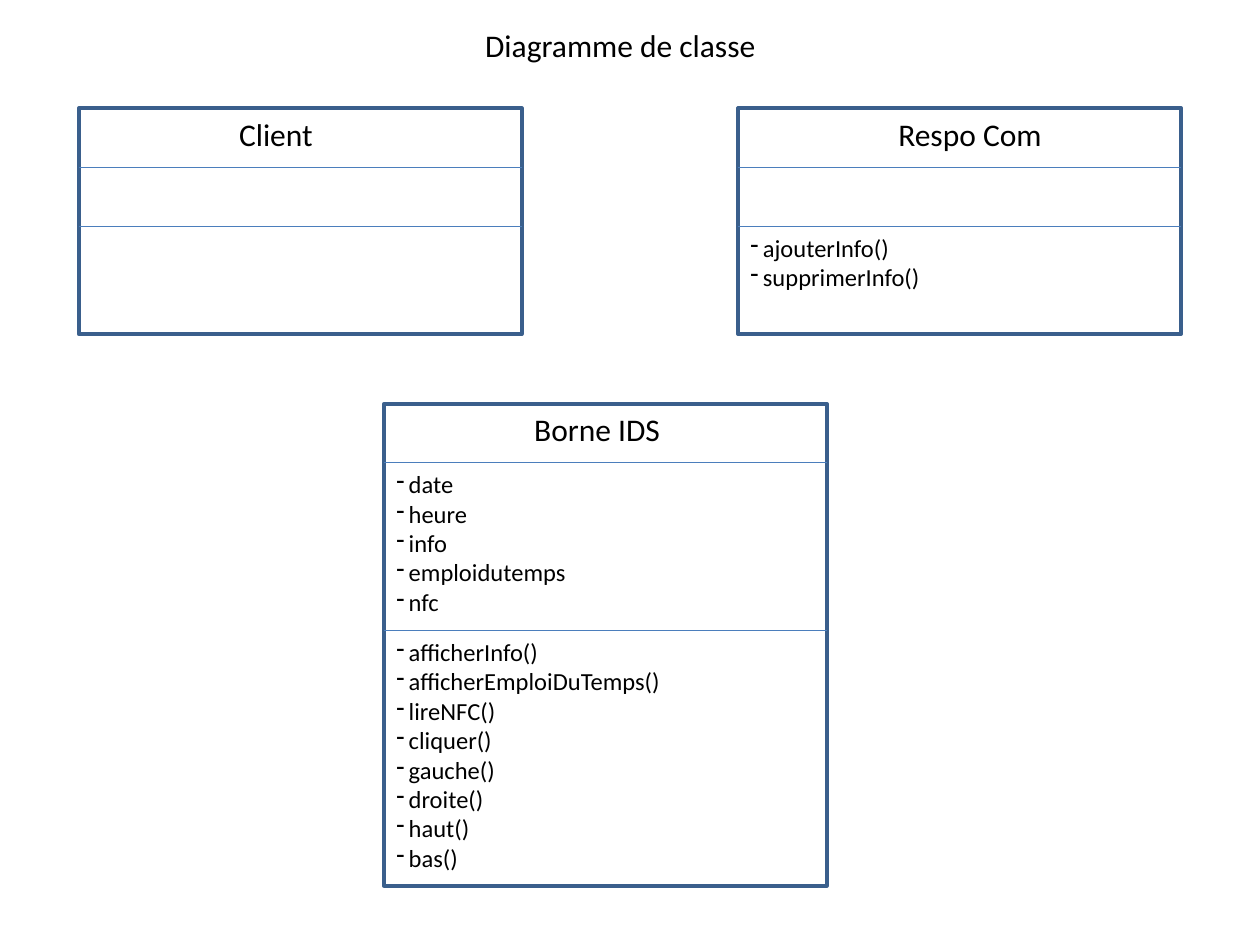
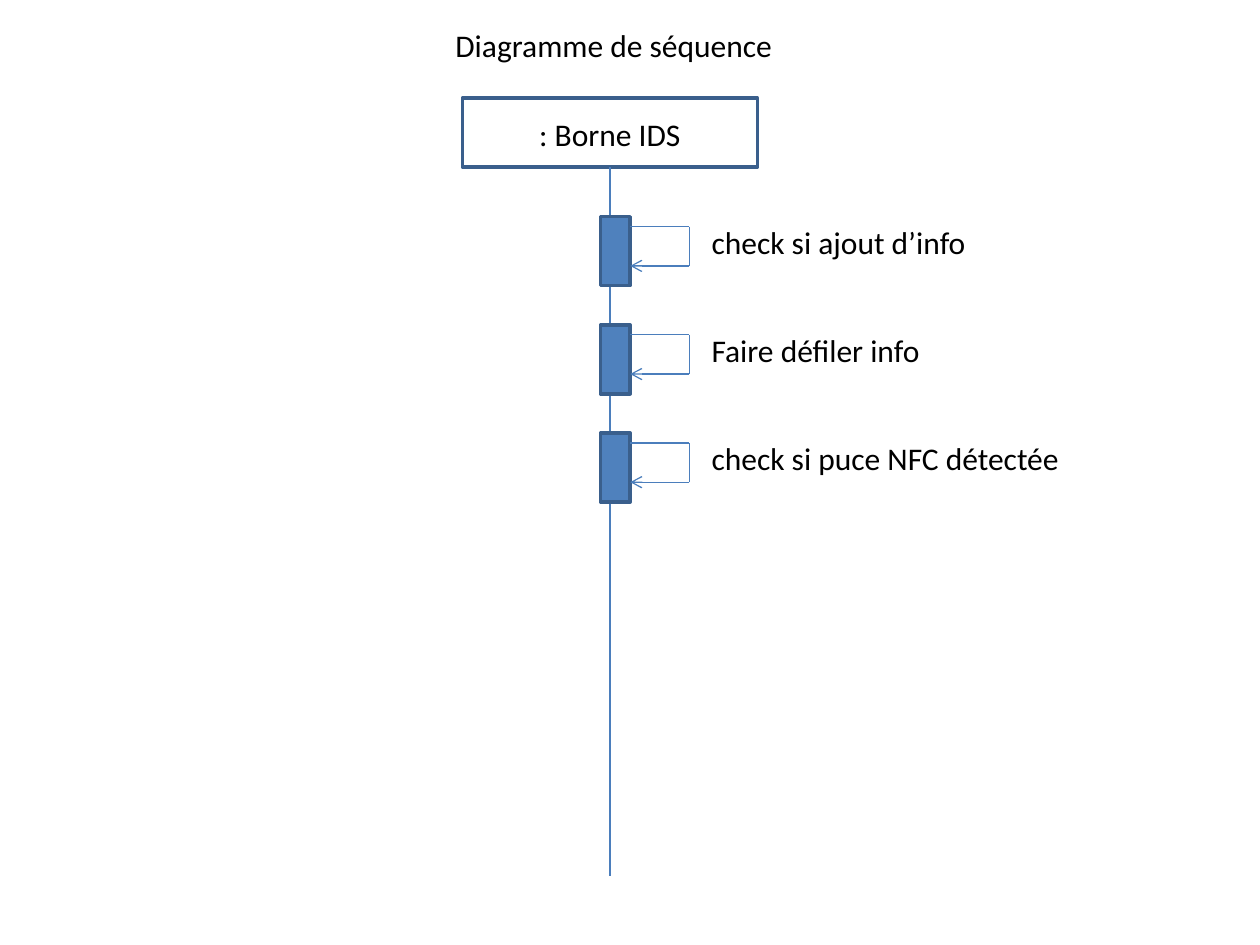
from collections import namedtuple

from pptx import Presentation
from pptx.dml.color import RGBColor
from pptx.enum.shapes import MSO_CONNECTOR as Connector, MSO_SHAPE as Shape
from pptx.enum.text import MSO_ANCHOR as Anchor, MSO_AUTO_SIZE as AutoSize, PP_ALIGN as Align
from pptx.oxml.ns import qn
from pptx.oxml.xmlchemy import OxmlElement
from pptx.util import Cm, Pt

Box = namedtuple("Box", "left top width height")

COLORS = {"text": "000000", "outline": "3A5F8C", "rule": "4B7EBC", "bar": "4F81BD"}
FRAME = {
    "word_wrap": True, "auto_size": AutoSize.NONE, "vertical_anchor": Anchor.TOP,
    "margin_left": Cm(0.25), "margin_right": Cm(0.25),
    "margin_top": Cm(0.13), "margin_bottom": Cm(0.13),
}
HEADING = {"name": "Calibri", "size": Pt(18), "bold": False}
MEMBER = {**HEADING, "size": Pt(14)}

LABEL_HEIGHT = 1.02
TITLE_TOP = 0.4
NAME_HEIGHT = 1.19
MEMBER_HEIGHT = 0.6
BULLET_INDENT = 0.25

CLASS_WIDTH = 8.93
CLASSES = [
    ("Client", Box(1.59, 2.18, CLASS_WIDTH, 4.56), 2.98, 2.38, [], []),
    ("Respo Com", Box(14.88, 2.18, CLASS_WIDTH, 4.56), 2.98, 2.38,
     [], ["ajouterInfo()", "supprimerInfo()"]),
    ("Borne IDS", Box(7.74, 8.14, CLASS_WIDTH, 9.72), 2.78, 4.57,
     ["date", "heure", "info", "emploidutemps", "nfc"],
     ["afficherInfo()", "afficherEmploiDuTemps()", "lireNFC()", "cliquer()",
      "gauche()", "droite()", "haut()", "bas()"]),
]
STEPS = [
    ("check si ajout d’info", 5.77),
    ("Faire défiler info", 4.78),
    ("check si puce NFC détectée", 7.75),
]


def rgb(color):
    return RGBColor.from_string(COLORS[color])


def apply(target, values):
    for key, value in values.items():
        setattr(target, key, value)


def add_bullet(para):
    props = para._p.get_or_add_pPr()
    props.set("marL", str(Cm(BULLET_INDENT)))
    props.set("indent", str(-Cm(BULLET_INDENT)))
    bullet = OxmlElement("a:buChar")
    bullet.set("char", "-")
    props.append(bullet)


def fill_text(shape, lines, font, align=Align.LEFT, bulleted=False):
    frame = shape.text_frame
    apply(frame, FRAME)
    frame.text = "\n".join(lines)
    for para in frame.paragraphs:
        para.alignment = align
        if bulleted:
            add_bullet(para)
        for span in para.runs:
            apply(span.font, font)
            span.font.color.rgb = rgb("text")


def add_label(page, box, lines, font=HEADING, **options):
    shape = page.shapes.add_textbox(*map(Cm, box))
    fill_text(shape, lines, font, **options)


def add_rectangle(page, box, fill=None):
    shape = page.shapes.add_shape(Shape.RECTANGLE, *map(Cm, box))
    shape.shadow.inherit = False
    if fill:
        shape.fill.solid()
        shape.fill.fore_color.rgb = rgb(fill)
    else:
        shape.fill.background()
    shape.line.color.rgb = rgb("outline")
    shape.line.width = Pt(2)


def add_line(page, start, end, arrow=False):
    line = page.shapes.add_connector(Connector.STRAIGHT, *map(Cm, start + end))
    line.line.color.rgb = rgb("rule")
    line.line.width = Pt(0.75)
    props = line._element.find(qn("p:spPr"))
    if arrow:
        tail = OxmlElement("a:tailEnd")
        tail.set("type", "arrow")
        props.find(qn("a:ln")).append(tail)
    props.append(OxmlElement("a:effectLst"))


def add_page(deck, title, left, width):
    page = deck.slides.add_slide(deck.slide_layouts[5])
    box = Box(left, TITLE_TOP, width, LABEL_HEIGHT)
    apply(page.shapes.title, dict(zip(Box._fields, map(Cm, box))))
    fill_text(page.shapes.title, [title], HEADING)
    return page


def add_class(page, name, box, name_offset, methods_offset, fields, methods):
    add_rectangle(page, box)
    name_box = Box(box.left + name_offset, box.top, 3.6, LABEL_HEIGHT)
    add_label(page, name_box, [name])
    for offset, members in ((NAME_HEIGHT, fields), (methods_offset, methods)):
        top = box.top + offset
        add_line(page, (box.left, top), (box.left + box.width, top))
        if members:
            height = 0.25 + MEMBER_HEIGHT * len(members)
            add_label(page, Box(box.left, top, box.width, height),
                      members, MEMBER, bulleted=True)


def add_step(page, box, caption, caption_width):
    add_rectangle(page, box, "bar")
    near = box.left + box.width
    far = near + 1.19
    top, bottom = box.top + 0.2, box.top + 0.99
    corners = [(near, top), (far, top), (far, bottom), (near, bottom)]
    for start, end in zip(corners, corners[1:]):
        add_line(page, start, end, arrow=end == corners[-1])
    add_label(page, Box(far + 0.2, box.top, caption_width, LABEL_HEIGHT), [caption])


def add_lifeline(page, box, name, length):
    add_rectangle(page, box)
    name_box = Box(box.left + 1.2, box.top + 0.2, box.width - 2.4, LABEL_HEIGHT)
    add_label(page, name_box, [name], align=Align.CENTER)
    center, bottom = box.left + box.width / 2, box.top + box.height
    add_line(page, (center, bottom), (center, bottom + length))
    for index, (caption, width) in enumerate(STEPS):
        step_box = Box(center - 0.19, bottom + 1 + index * 2.18, 0.6, box.height)
        add_step(page, step_box, caption, width)


def class_slide(deck):
    page = add_page(deck, "Diagramme de classe", 9.53, 6.15)
    for entry in CLASSES:
        add_class(page, *entry)


def sequence_slide(deck):
    page = add_page(deck, "Diagramme de séquence", 8.93, 6.95)
    add_lifeline(page, Box(9.32, 1.98, 5.95, 1.39), ": Borne IDS", 14.28)


def main():
    deck = Presentation()
    apply(deck, {"slide_width": Cm(25.4), "slide_height": Cm(19.05)})
    class_slide(deck)
    sequence_slide(deck)
    deck.save("out.pptx")


if __name__ == "__main__":
    main()
